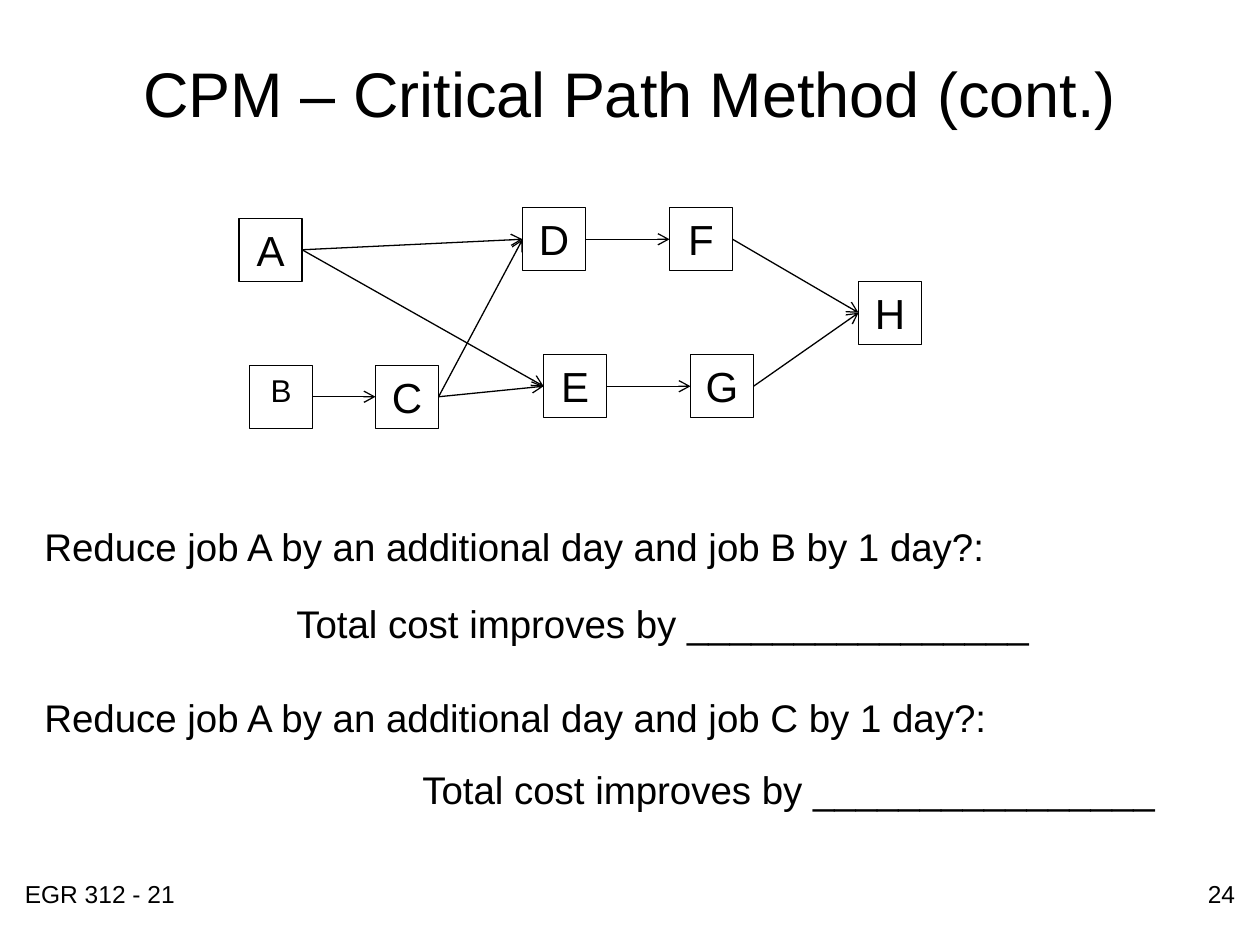
import pptx
import pptx.dml.color
import pptx.enum.shapes
import pptx.enum.text
import pptx.oxml.ns
import pptx.util
from lxml import etree
from pptx.util import Cm, Pt

ALIGN = pptx.enum.text.PP_ALIGN
ANCHOR = pptx.enum.text.MSO_ANCHOR
RIGHT_SIDE, LEFT_SIDE = 3, 1

STEP = 2.54 / 12
ORIGIN_LEFT, ORIGIN_TOP = 4.82, 4.4
JOB_SIDE = 6 * STEP
JOBS = {
    "A": (0, 0),
    "B": (1, 14),
    "C": (13, 14),
    "D": (27, -1),
    "E": (29, 13),
    "F": (41, -1),
    "G": (43, 13),
    "H": (59, 6),
}
SEQUENCE = ["FH", "GH", "DF", "EG", "AD", "BC", "CE", "AE", "CD"]
ANSWER = "Total cost improves by ________________"
QUESTIONS = [
    ("Reduce job A by an additional day and job B by 1 day?:", dict()),
    (ANSWER, dict(indent=5.08, spacing=1.67)),
    ("Reduce job A by an additional day and job C by 1 day?:", dict(before=27)),
    (ANSWER, dict(indent=7.62, spacing=1.56)),
]


def color(value):
    return pptx.dml.color.RGBColor.from_string(value)


def write(para, text, size=22, font="Arial", ink="000000", align=ALIGN.LEFT,
          before=0, spacing=1.0, indent=0):
    para.alignment = align
    para.space_before = Pt(before)
    para.line_spacing = spacing
    properties = para._p.get_or_add_pPr()
    properties.set("marL", str(Cm(indent)))
    properties.set("indent", "0")
    etree.SubElement(properties, pptx.oxml.ns.qn("a:buNone"))
    span = para.add_run()
    span.text = text
    span.font.size = Pt(size)
    span.font.name = font
    span.font.color.rgb = color(ink)


class Slide:
    ink = "000000"
    line_width = 0.75

    def __init__(self, deck):
        self.page = deck.slides.add_slide(deck.slide_layouts[1])

    def place(self, box, left, top, width, height, anchor=ANCHOR.TOP):
        box.left, box.top = Cm(left), Cm(top)
        box.width, box.height = Cm(width), Cm(height)
        frame = box.text_frame
        frame.word_wrap = True
        frame.auto_size = pptx.enum.text.MSO_AUTO_SIZE.NONE
        frame.vertical_anchor = anchor
        return frame

    def title(self, text, *area):
        frame = self.place(self.page.shapes.title, *area, anchor=ANCHOR.MIDDLE)
        write(frame.paragraphs[0], text, size=36, align=ALIGN.CENTER)

    def body(self, lines, *area):
        frame = self.place(self.page.placeholders[1], *area)
        for number, (text, style) in enumerate(lines):
            para = frame.add_paragraph() if number else frame.paragraphs[0]
            write(para, text, **style)

    def label(self, text, *area, align=ALIGN.LEFT):
        box = self.page.shapes.add_textbox(0, 0, 0, 0)
        frame = self.place(box, *area)
        write(frame.paragraphs[0], text, size=14, align=align)

    def job(self, name, column, row, size):
        box = self.page.shapes.add_shape(
            pptx.enum.shapes.MSO_SHAPE.RECTANGLE, 0, 0, 0, 0)
        frame = self.place(box, ORIGIN_LEFT + column * STEP,
                           ORIGIN_TOP + row * STEP, JOB_SIDE, JOB_SIDE)
        box.shadow.inherit = False
        box.fill.background()
        box.line.color.rgb = color(self.ink)
        box.line.width = Pt(self.line_width)
        write(frame.paragraphs[0], name, size=size, align=ALIGN.CENTER, before=2.5)
        return box

    def arrow(self, start, end):
        line = self.page.shapes.add_connector(
            pptx.enum.shapes.MSO_CONNECTOR.STRAIGHT, 0, 0, 0, 0)
        line.begin_connect(start, RIGHT_SIDE)
        line.end_connect(end, LEFT_SIDE)
        line.line.color.rgb = color(self.ink)
        line.line.width = Pt(self.line_width)
        qn = pptx.oxml.ns.qn
        etree.SubElement(line.line._get_or_add_ln(), qn("a:tailEnd"), type="arrow")
        etree.SubElement(line._element.spPr, qn("a:effectLst"))


def main():
    deck = pptx.Presentation()
    deck.slide_width, deck.slide_height = Cm(25.4), Cm(19.05)
    slide = Slide(deck)
    slide.label("EGR 312 - 21", 0.25, 17.6, 5.92, 1.32)
    slide.label("24", 19.23, 17.6, 5.92, 1.32, align=ALIGN.RIGHT)
    slide.title("CPM – Critical Path Method (cont.)", 1.9, 0.56, 21.6, 2.62)
    slide.body(QUESTIONS, 0.64, 10.42, 24.13, 6.3)
    boxes = {name: slide.job(name, column, row, 18 if name == "B" else 24)
             for name, (column, row) in JOBS.items()}
    for first, second in SEQUENCE:
        slide.arrow(boxes[first], boxes[second])
    deck.save("out.pptx")


if __name__ == "__main__":
    main()
